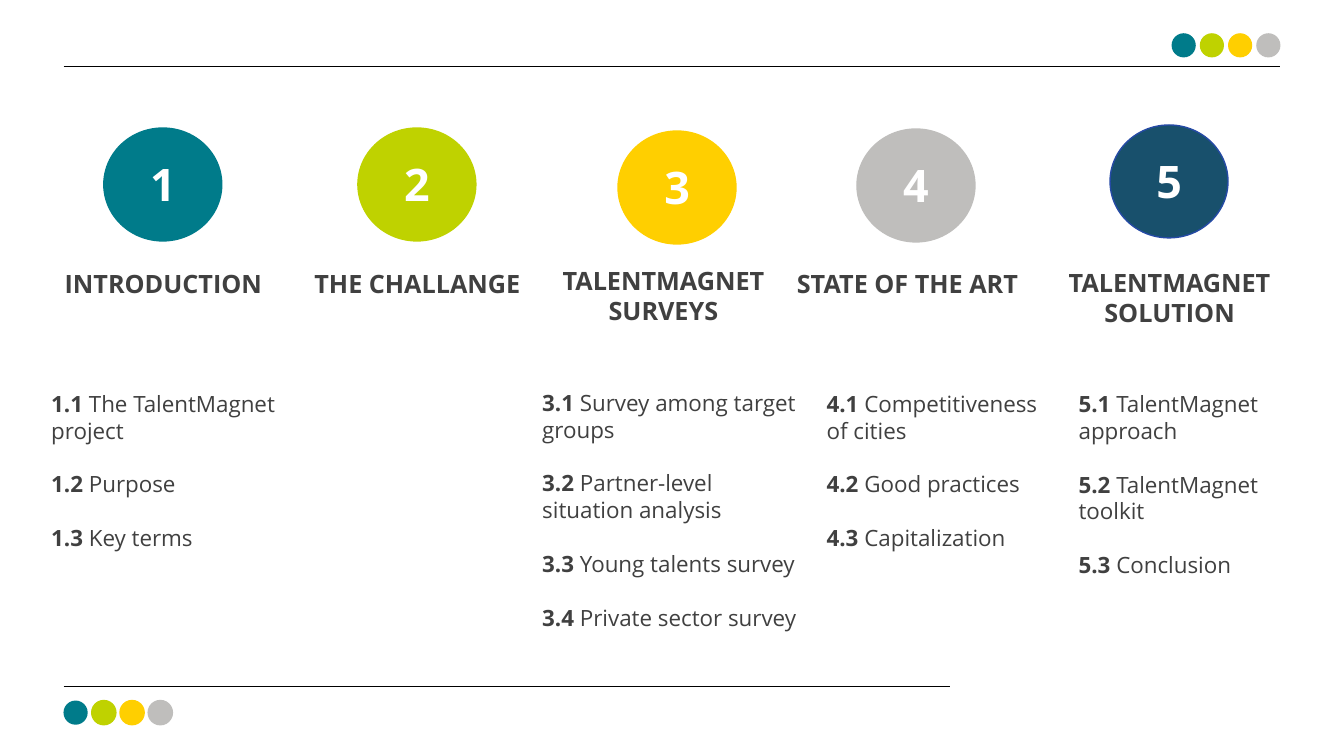
from dataclasses import dataclass

from lxml import etree
from pptx import Presentation
from pptx.dml.color import RGBColor
from pptx.enum.shapes import MSO_CONNECTOR, MSO_SHAPE
from pptx.enum.text import PP_ALIGN
from pptx.oxml.ns import qn
from pptx.util import Inches, Pt

LINE = MSO_CONNECTOR.STRAIGHT
OVAL, DOT = MSO_SHAPE.OVAL, MSO_SHAPE.FLOWCHART_CONNECTOR
LEFT, CENTER = PP_ALIGN.LEFT, PP_ALIGN.CENTER


@dataclass(frozen=True)
class Theme:
    font: str = "Open Sans"
    text: str = "404040"
    white: str = "FFFFFF"
    rule: str = "000000"
    teal: str = "007B8A"
    lime: str = "BFD200"
    yellow: str = "FFCF00"
    gray: str = "BFBEBC"
    navy: str = "18506C"
    navy_edge: str = "254AA5"
    number_size: float = 32
    title_size: float = 18
    item_size: float = 16
    item_gap: float = 19.2


T = Theme()
DOT_COLORS = (T.teal, T.lime, T.yellow, T.gray)
DOT_SIZE, DOT_STEP = 0.24, 0.28
BADGE_W, BADGE_H = 1.17, 1.12
NUMBER_W, NUMBER_H = 0.52, 0.64
TITLE_W = 2.42

# Badge fill and edge, badge corner, title, title corner, list box, list items
CHAPTERS = [
    (T.teal, T.teal, (1.03, 1.27), "INTRODUCTION", (0.41, 2.61),
     (0.41, 3.82, 2.56, 2.26),
     ["The TalentMagnet project", "Purpose", "Key terms"]),
    (T.lime, T.lime, (3.55, 1.27), "THE CHALLANGE", (2.93, 2.61), None, []),
    (T.yellow, T.yellow, (6.13, 1.3), "TALENTMAGNET SURVEYS", (5.37, 2.58),
     (5.28, 3.81, 2.74, 3.06),
     ["Survey among target groups", "Partner-level situation analysis",
      "Young talents survey", "Private sector survey"]),
    (T.gray, T.gray, (8.5, 1.28), "STATE OF THE ART", (7.79, 2.61),
     (8.1, 3.82, 2.41, 2.26),
     ["Competitiveness of cities", "Good practices", "Capitalization"]),
    (T.navy, T.navy_edge, (11.01, 1.24), "TALENTMAGNET SOLUTION", (10.39, 2.6),
     (10.6, 3.82, 2.53, 2.79),
     ["TalentMagnet approach", "TalentMagnet toolkit", "Conclusion"]),
]


def rgb(color):
    return RGBColor.from_string(color)


def add_text(shapes, box, paragraphs, size, color, align=LEFT, gap=0):
    """Each paragraph is a list of (text, bold) runs."""
    tf = shapes.add_textbox(*map(Inches, box)).text_frame
    tf.word_wrap = True
    for i, runs in enumerate(paragraphs):
        p = tf.add_paragraph() if i else tf.paragraphs[0]
        p.alignment = align
        if i and gap:
            p.space_before = Pt(gap)
        for text, bold in runs:
            r = p.add_run()
            r.text = text
            r.font.name, r.font.size, r.font.bold = T.font, Pt(size), bold
            r.font.color.rgb = rgb(color)


def add_disc(shapes, kind, box, fill, edge=None):
    sp = shapes.add_shape(kind, *map(Inches, box))
    sp.shadow.inherit = False
    sp.fill.solid()
    sp.fill.fore_color.rgb = rgb(fill)
    if edge:
        sp.line.color.rgb = rgb(edge)
        sp.line.width = Pt(1)
    else:
        sp.line.fill.background()


def add_rule(shapes, x1, x2, y):
    line = shapes.add_connector(LINE, *map(Inches, (x1, y, x2, y)))
    line.line.color.rgb = rgb(T.rule)
    line.line.width = Pt(0.5)
    etree.SubElement(line._element.spPr, qn("a:effectLst"))


def add_band(shapes, rule, dots, edges):
    """A thin rule with a row of four dots."""
    add_rule(shapes, *rule)
    x, y = dots
    for i, (color, edge) in enumerate(zip(DOT_COLORS, edges)):
        add_disc(shapes, DOT, (x + i * DOT_STEP, y, DOT_SIZE, DOT_SIZE), color, edge)


def add_badge(shapes, corner, number, fill, edge):
    x, y = corner
    group = shapes.add_group_shape().shapes
    add_disc(group, OVAL, (x, y, BADGE_W, BADGE_H), fill, edge)
    box = (x + (BADGE_W - NUMBER_W) / 2, y + (BADGE_H - NUMBER_H) / 2,
           NUMBER_W, NUMBER_H)
    add_text(group, box, [[(str(number), True)]], T.number_size, T.white, CENTER)


def add_chapter(shapes, number, fill, edge, badge, title, title_at, list_box, items):
    add_badge(shapes, badge, number, fill, edge)
    add_text(shapes, (*title_at, TITLE_W, 0.71), [[(title, True)]],
             T.title_size, T.text, CENTER)
    if items:
        rows = [[(f"{number}.{i} ", True), (item, False)]
                for i, item in enumerate(items, 1)]
        add_text(shapes, list_box, rows, T.item_size, T.text, gap=T.item_gap)


def main():
    prs = Presentation()
    prs.slide_width, prs.slide_height = Inches(13.33), Inches(7.5)
    s = prs.slides.add_slide(prs.slide_layouts[6])
    add_band(s.shapes, (0.63, 12.7, 0.66), (11.62, 0.33), [None] * 4)
    add_band(s.shapes, (0.63, 9.42, 6.81), (0.63, 6.95), (None, *DOT_COLORS[1:]))
    for number, chapter in enumerate(CHAPTERS, 1):
        add_chapter(s.shapes, number, *chapter)
    prs.save("out.pptx")


if __name__ == "__main__":
    main()
